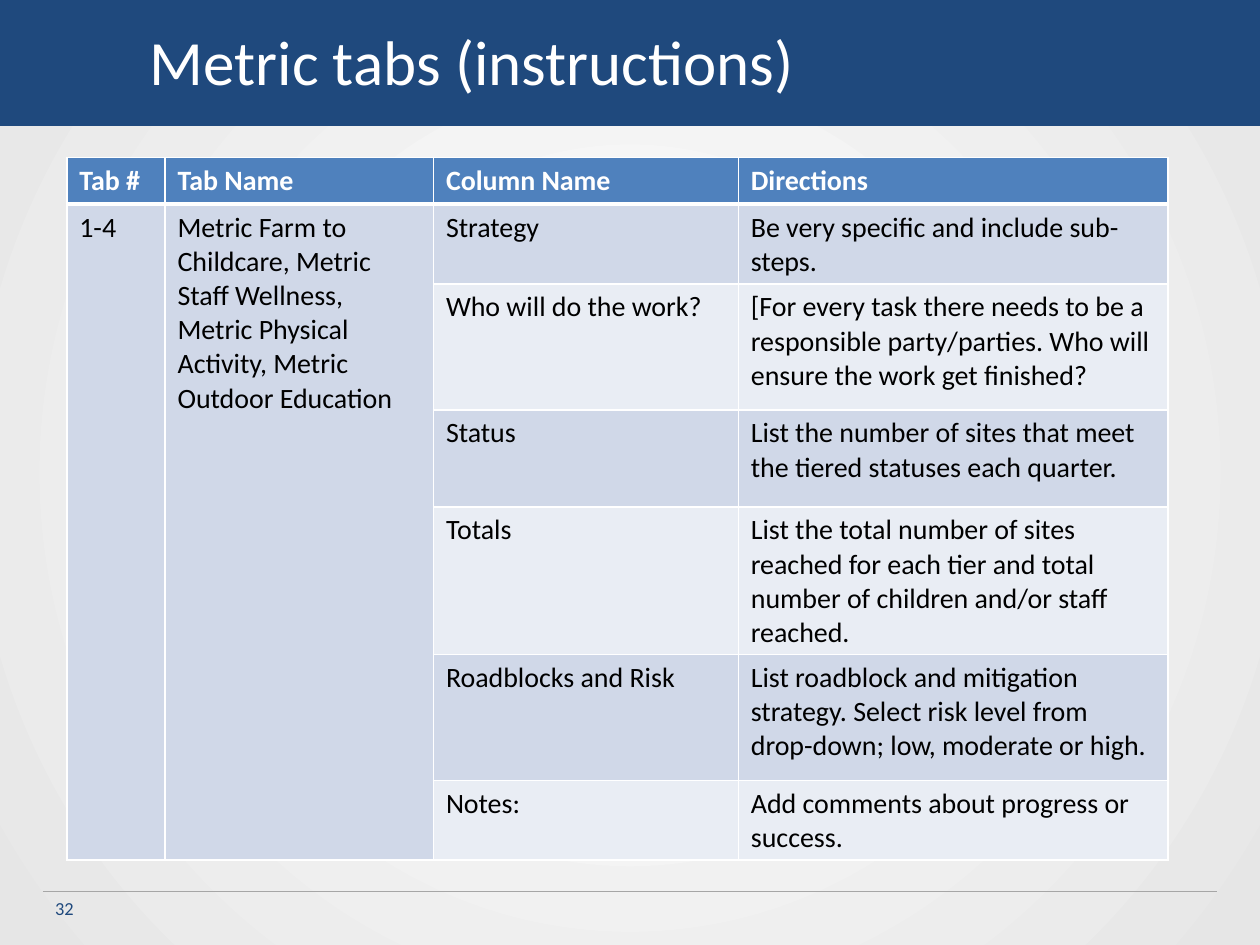
"""Build the metric tabs instruction slide."""
import dataclasses

import lxml.etree
import pptx
import pptx.dml.color
import pptx.enum.shapes
import pptx.enum.text
import pptx.oxml
import pptx.oxml.ns
import pptx.util


@dataclasses.dataclass(frozen=True)
class Theme:
    """Colours, font and type sizes."""
    font: str = "Calibri"
    navy: str = "1F497D"
    head: str = "4F81BD"
    bands: tuple = ("D0D8E8", "E9EDF4")
    white: str = "FFFFFF"
    edge: str = "E6E6E6"
    rule: str = "A6A6A6"
    ink: str = "000000"
    title: float = 36
    body: float = 16
    note: float = 10.5


def color(code):
    """Return the colour of a hex code."""
    return pptx.dml.color.RGBColor.from_string(code)


def child(node, tag, **attrs):
    """Append a drawing element to a node."""
    return lxml.etree.SubElement(node, pptx.oxml.ns.qn(tag), attrs)


class Page:
    """Hold the theme and the slide, and draw by shares of its size."""

    def __init__(self, deck, theme):
        self.theme = theme
        self.wide, self.high = deck.slide_width, deck.slide_height
        self.slide = deck.slides.add_slide(deck.slide_layouts[5])
        self.shapes = self.slide.shapes

    def box(self, x, y, w, h):
        """Turn shares into lengths."""
        return (int(x * self.wide), int(y * self.high),
                int(w * self.wide), int(h * self.high))

    def style(self, frame, size, code, bold=False):
        """Format every run of a text frame."""
        for para in frame.paragraphs:
            para.alignment = pptx.enum.text.PP_ALIGN.LEFT
            for run in para.runs:
                run.font.name = self.theme.font
                run.font.size = pptx.util.Pt(size)
                run.font.bold = bold
                run.font.color.rgb = color(code)

    def glow(self, inner, outer):
        """Fill the background with a round gradient."""
        fill = self.slide.background.fill
        fill.gradient()
        for stop, code in zip(fill.gradient_stops, (inner, outer)):
            stop.color.rgb = color(code)
        grad = self.slide.element.find(".//" + pptx.oxml.ns.qn("a:gradFill"))
        grad.remove(grad.find(pptx.oxml.ns.qn("a:lin")))
        ring = child(grad, "a:path", path="circle")
        child(ring, "a:fillToRect", **dict.fromkeys("ltrb", "50000"))

    def band(self, *area):
        """Draw a plain filled bar."""
        bar = self.shapes.add_shape(
            pptx.enum.shapes.MSO_SHAPE.RECTANGLE, *self.box(*area))
        bar.shadow.inherit = False
        bar.fill.solid()
        bar.fill.fore_color.rgb = color(self.theme.navy)
        bar.line.fill.background()

    def rule(self, x, y, end):
        """Draw a thin level line."""
        left, top, right, base = self.box(x, y, end, y)
        line = self.shapes.add_connector(
            pptx.enum.shapes.MSO_CONNECTOR.STRAIGHT, left, top, right, base)
        line.line.color.rgb = color(self.theme.rule)
        line.line.width = pptx.util.Pt(0.25)
        child(line.element.spPr, "a:effectLst")

    def title(self, text, *area):
        """Place the title in front of the bar."""
        item = self.shapes.title
        item.left, item.top, item.width, item.height = self.box(*area)
        frame = item.text_frame
        frame.text = text
        frame.word_wrap = False
        frame.auto_size = pptx.enum.text.MSO_AUTO_SIZE.SHAPE_TO_FIT_TEXT
        self.style(frame, self.theme.title, self.theme.white)
        item.element.getparent().append(item.element)

    def note(self, text, *area):
        """Add a small text box."""
        frame = self.shapes.add_textbox(*self.box(*area)).text_frame
        frame.text = text
        frame.word_wrap = True
        self.style(frame, self.theme.note, self.theme.navy)

    def cell(self, cell, text, row):
        """Fill, frame and write one table cell."""
        theme = self.theme
        props = cell._tc.get_or_add_tcPr()
        thick = {"T": row == 1, "B": row == 0}
        for side in "LRTB":
            width = pptx.util.Pt(3 if thick.get(side) else 1)
            line = child(props, "a:ln" + side, w=str(width))
            child(child(line, "a:solidFill"), "a:srgbClr", val=theme.white)
        cell.fill.solid()
        shade = theme.bands[(row - 1) % 2] if row else theme.head
        cell.fill.fore_color.rgb = color(shade)
        if text:
            cell.text_frame.text = text
            self.style(cell.text_frame, theme.body,
                       theme.ink if row else theme.white, bold=not row)

    def table(self, data, cols, rows, x, y):
        """Add a table whose first two columns span the body."""
        area = self.box(x, y, sum(cols), sum(rows))
        grid = self.shapes.add_table(len(rows), len(cols), *area).table
        for part, share in zip(grid.columns, cols):
            part.width = int(share * self.wide)
        for part, share in zip(grid.rows, rows):
            part.height = int(share * self.high)
        for r, line in enumerate(data):
            for c, text in enumerate(line):
                self.cell(grid.cell(r, c), text, r)
        for c in range(2):
            grid.cell(1, c).merge(grid.cell(len(rows) - 1, c))


HEADS = ("Tab #", "Tab Name", "Column Name", "Directions")
TABS = ("1-4", "Metric Farm to Childcare, Metric Staff Wellness, "
        "Metric Physical Activity, Metric Outdoor Education")
STEPS = (
    ("Strategy", "Be very specific and include sub-steps."),
    ("Who will do the work?",
     "[For every task there needs to be a responsible party/parties. "
     "Who will ensure the work get finished?"),
    ("Status",
     "List the number of sites that meet the tiered statuses each quarter."),
    ("Totals",
     "List the total number of sites reached for each tier and total "
     "number of children and/or staff reached."),
    ("Roadblocks and Risk",
     "List roadblock and mitigation strategy. Select risk level from "
     "drop-down; low, moderate or high."),
    ("Notes:", "Add comments about progress or success."),
)


def main():
    """Build and save the slide."""
    deck = pptx.Presentation()
    deck.slide_width = pptx.util.Inches(10)
    deck.slide_height = pptx.util.Inches(7.5)
    theme = Theme()
    page = Page(deck, theme)
    page.glow(theme.white, theme.edge)
    page.rule(0.034, 7.07 / 7.5, 0.966)
    page.band(0, -0.01 / 7.5, 1, 1.01 / 7.5)
    page.note("32", 0.034, 7.07 / 7.5, 0.233, 0.4 / 7.5)
    page.title("Metric tabs (instructions)",
               0.109, 0.12 / 7.5, 0.536, 0.71 / 7.5)
    body = [(TABS if i == 0 else ("", "")) + step
            for i, step in enumerate(STEPS)]
    cols = [w / 10 for w in (0.78, 2.13, 2.42, 3.41)]
    rows = [h / 7.5 for h in (0.37, 0.63, 1, 0.77, 1.17, 1, 0.63)]
    page.table([HEADS] + body, cols, rows, 0.053, 1.25 / 7.5)
    deck.save("out.pptx")


if __name__ == "__main__":
    main()
